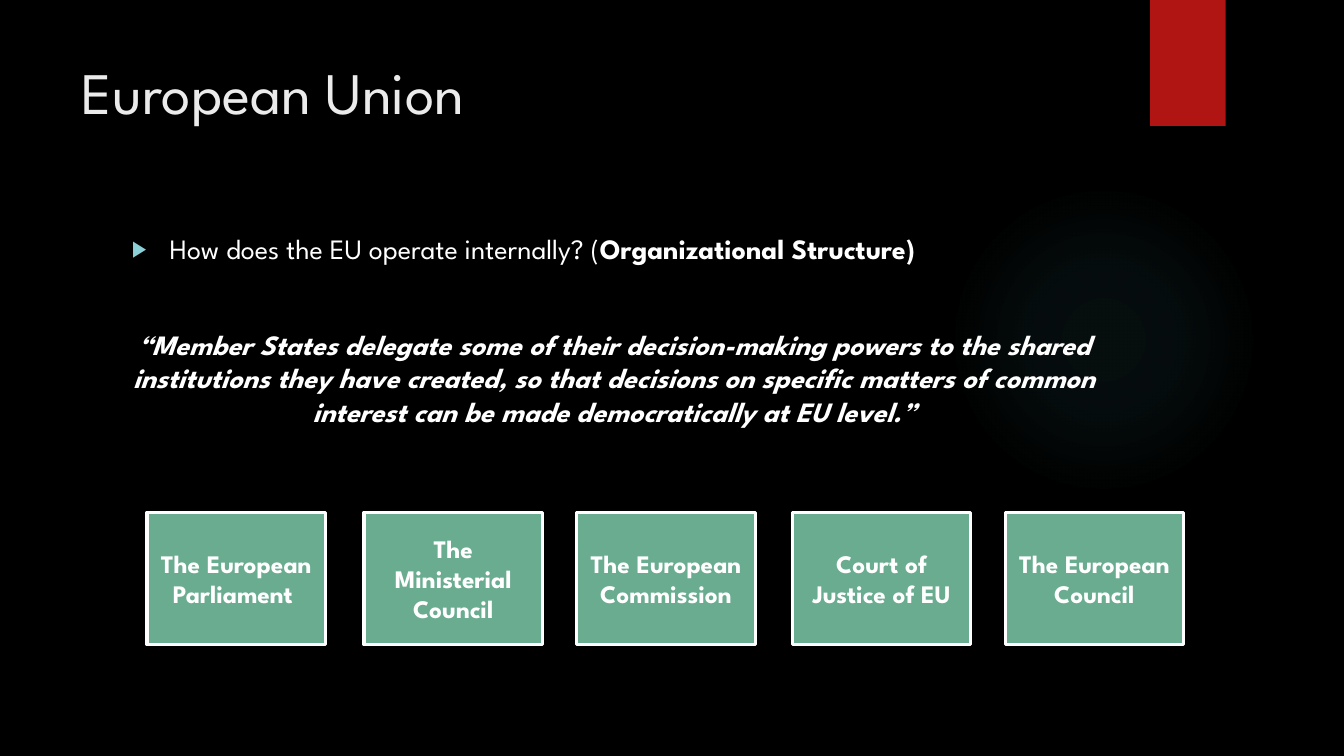
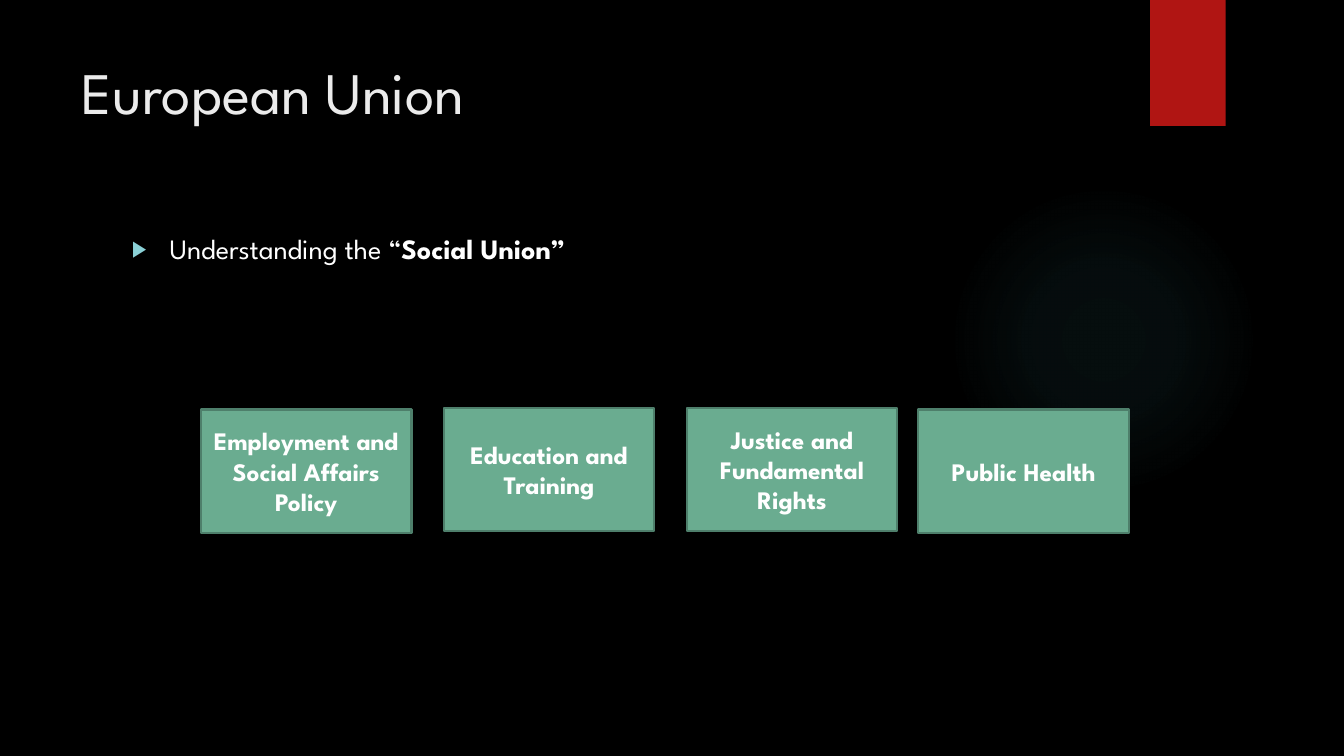
from lxml.etree import SubElement
from pptx import Presentation
from pptx.dml.color import RGBColor
from pptx.enum.shapes import MSO_SHAPE
from pptx.enum.text import MSO_ANCHOR, MSO_AUTO_SIZE, PP_ALIGN
from pptx.oxml import parse_xml
from pptx.oxml.ns import nsdecls, qn
from pptx.util import Pt

# Content: (text, bold) runs; boxes as (label, left, top)
SLIDES = [
    {
        "title": "European Union",
        "topic": [("How does the EU operate internally? (", False),
                  ("Organizational Structure)", True)],
        "quote": "“Member States delegate some of their decision-making powers "
                 "to the shared institutions they have created, so that decisions "
                 "on specific matters of common interest can be made "
                 "democratically at EU level.”",
        "box_size": (127.5, 94.5),
        "border": ("FFFFFF", 2.25),
        "boxes": [("The European Parliament ", 105, 366),
                  ("The Ministerial Council", 260, 366),
                  ("The European Commission", 412, 366),
                  ("Court of Justice of EU", 566, 366),
                  ("The European Council", 718, 366)],
    },
    {
        "title": "European Union",
        "topic": [("Understanding the “", False), ("Social Union”", True)],
        "box_size": (150.5, 88),
        "border": ("4E7F6B", 1.5),
        "boxes": [("Employment and Social Affairs Policy", 143.5, 292.5),
                  ("Education and Training", 317, 291.5),
                  ("Justice and Fundamental Rights", 490.5, 291.5),
                  ("Public Health", 656, 292.5)],
    },
]

# Shared style
FONT = "League Spartan"
BLACK, WHITE, TITLE_GREY = "000000", "FFFFFF", "EBEBEB"
RED, GREEN, GLOW, BULLET = "B01513", "6AAC90", "50B9C1", "8AD0D6"
TITLE_AREA = (51, 36, 741, 110)
BODY_AREA = (87, 162, 704, 330.5)
GLOW_AREA = (677.5, 132, 221.5, 221.5)
BAND_AREA = (821.5, 0, 54, 90)
GLOW_STOPS = [(0, 7), (36, 6), (69, 0)]  # position %, opacity %
TOPIC_INDENT = 27
QUOTE_GAP = 44


def color(hex_code):
    return RGBColor.from_string(hex_code)


def place(shape, area):
    shape.left, shape.top, shape.width, shape.height = map(Pt, area)


def write(paragraph, text, size=20, fill=WHITE, bold=False, italic=False,
          align=PP_ALIGN.LEFT):
    paragraph.alignment = align
    run = paragraph.add_run()
    run.text = text
    font = run.font
    font.name, font.size, font.bold, font.italic = FONT, Pt(size), bold, italic
    font.color.rgb = color(fill)


def set_bullet(paragraph, char=None):
    props = paragraph._p.get_or_add_pPr()
    indent = Pt(TOPIC_INDENT) if char else 0
    props.set("marL", str(indent))
    props.set("indent", str(-indent))
    if not char:
        SubElement(props, qn("a:buNone"))
        return
    SubElement(SubElement(props, qn("a:buClr")), qn("a:srgbClr")).set("val", BULLET)
    SubElement(props, qn("a:buSzPct")).set("val", "80000")
    SubElement(props, qn("a:buFont")).set("typeface", "Arial")
    SubElement(props, qn("a:buChar")).set("char", char)


def add_block(slide, kind, area, fill=None, border=None):
    block = slide.shapes.add_shape(kind, *map(Pt, area))
    block.shadow.inherit = False
    if fill:
        block.fill.solid()
        block.fill.fore_color.rgb = color(fill)
    else:
        block.fill.background()
    if border:
        block.line.color.rgb = color(border[0])
        block.line.width = Pt(border[1])
    else:
        block.line.fill.background()
    return block


def set_glow(shape):
    stops = "".join(
        f'<a:gs pos="{pos * 1000}"><a:srgbClr val="{GLOW}">'
        f'<a:alpha val="{opacity * 1000}"/></a:srgbClr></a:gs>'
        for pos, opacity in GLOW_STOPS)
    gradient = parse_xml(
        f'<a:gradFill {nsdecls("a")} rotWithShape="1"><a:gsLst>{stops}</a:gsLst>'
        '<a:path path="circle"><a:fillToRect l="50000" t="50000" r="50000" '
        'b="50000"/></a:path></a:gradFill>')
    props = shape.element.spPr
    props.replace(props.find(qn("a:noFill")), gradient)


def decorate_layout(layout, slide):
    """Draw the glow and the band, then move them behind the layout's text."""
    glow = add_block(slide, MSO_SHAPE.OVAL, GLOW_AREA)
    set_glow(glow)
    band = add_block(slide, MSO_SHAPE.RECTANGLE, BAND_AREA, RED)
    for offset, part in enumerate((glow, band)):
        layout.shapes.element.insert(2 + offset, part.element)


def open_frame(placeholder):
    frame = placeholder.text_frame
    frame.word_wrap = True
    frame.auto_size = MSO_AUTO_SIZE.NONE
    frame.vertical_anchor = MSO_ANCHOR.TOP
    return frame


def fill_slide(slide, content):
    title, body = slide.placeholders
    write(open_frame(title).paragraphs[0], content["title"], size=42,
          fill=TITLE_GREY)

    # Topic line and quotation
    frame = open_frame(body)
    topic = frame.paragraphs[0]
    set_bullet(topic, "▶")
    topic.space_before = Pt(0)
    for text, bold in content["topic"]:
        write(topic, text, bold=bold)
    if "quote" in content:
        quote = frame.add_paragraph()
        set_bullet(quote)
        quote.space_before = Pt(QUOTE_GAP)
        write(quote, content["quote"], bold=True, italic=True,
              align=PP_ALIGN.CENTER)

    # Row of boxes
    for label, left, top in content["boxes"]:
        box = add_block(slide, MSO_SHAPE.RECTANGLE,
                        (left, top, *content["box_size"]), GREEN,
                        content["border"])
        box.text_frame.word_wrap = True
        box.text_frame.vertical_anchor = MSO_ANCHOR.MIDDLE
        write(box.text_frame.paragraphs[0], label, size=18, bold=True,
              align=PP_ALIGN.CENTER)


def main():
    deck = Presentation()
    deck.slide_width, deck.slide_height = Pt(960), Pt(540)
    background = deck.slide_master.background.fill
    background.solid()
    background.fore_color.rgb = color(BLACK)

    layout = deck.slide_layouts[1]
    place(layout.placeholders[0], TITLE_AREA)
    place(layout.placeholders[1], BODY_AREA)
    slides = [deck.slides.add_slide(layout) for _ in SLIDES]
    decorate_layout(layout, slides[0])
    for slide, content in zip(slides, SLIDES):
        fill_slide(slide, content)
    deck.save("out.pptx")


if __name__ == "__main__":
    main()
